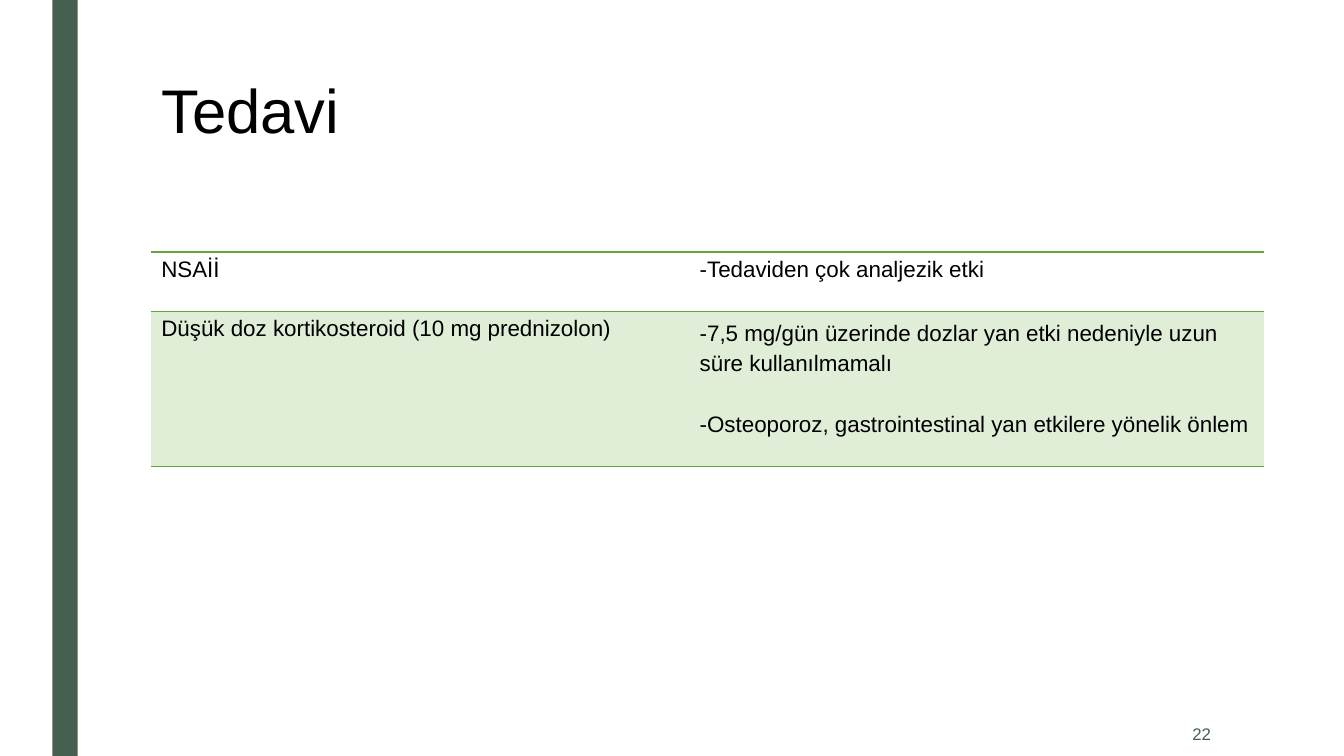
from pptx import Presentation
from pptx.dml.color import RGBColor
from pptx.enum.shapes import MSO_SHAPE
from pptx.enum.text import MSO_ANCHOR, PP_ALIGN
from pptx.oxml import parse_xml
from pptx.oxml.ns import nsdecls
from pptx.util import Inches, Pt

COLORS = {"text": "000000", "bar": "455F51", "rule": "63A537", "band": "E0EDD7"}


def style(para, size, color="text"):
    para.font.name = "Arial"
    para.font.size = Pt(size)
    para.font.color.rgb = RGBColor.from_string(COLORS[color])


def set_borders(cell):
    """Green rules above and below the cell, none at its sides."""
    rule = f'<a:solidFill><a:srgbClr val="{COLORS["rule"]}"/></a:solidFill>'
    sides = {"lnL": "<a:noFill/>", "lnR": "<a:noFill/>", "lnT": rule, "lnB": rule}
    properties = cell._tc.get_or_add_tcPr()
    for position, (side, paint) in enumerate(sides.items()):
        line = f'<a:{side} {nsdecls("a")} w="{Pt(1)}">{paint}</a:{side}>'
        properties.insert(position, parse_xml(line))


deck = Presentation()
deck.slide_width, deck.slide_height = Inches(13.33), Inches(7.5)
page = deck.slides.add_slide(deck.slide_layouts[5])

# Side bar
bar = page.shapes.add_shape(MSO_SHAPE.RECTANGLE, Inches(0.52), 0, Inches(0.25), Inches(7.5))
bar.shadow.inherit = False
bar.fill.solid()
bar.fill.fore_color.rgb = RGBColor.from_string(COLORS["bar"])
bar.line.fill.background()

# Title
title = page.shapes.title
title.left, title.top = Inches(1.5), Inches(0.75)
title.width, title.height = Inches(10.5), Inches(1.62)
title.text_frame.text = "Tedavi"
title.text_frame.vertical_anchor = MSO_ANCHOR.TOP
heading = title.text_frame.paragraphs[0]
heading.alignment = PP_ALIGN.LEFT
heading.line_spacing = 0.89
style(heading, 44)

# Treatment table: drug, notes (one paragraph each), line spacing of the notes
treatments = [
    ("NSAİİ", ["-Tedaviden çok analjezik etki"], 1.0),
    ("Düşük doz kortikosteroid (10 mg prednizolon)",
     ["-7,5 mg/gün üzerinde dozlar yan etki nedeniyle uzun süre kullanılmamalı",
      "-Osteoporoz, gastrointestinal yan etkilere yönelik önlem"], 1.2),
]
table = page.shapes.add_table(2, 2, Inches(1.5), Inches(2.5), Inches(11.04), Inches(2.13)).table
table.first_row = table.horz_banding = False
for column, width in zip(table.columns, (4.84, 6.2)):
    column.width = Inches(width)
for row, height in zip(table.rows, (0.59, 1.54)):
    row.height = Inches(height)

for index, (drug, notes, spacing) in enumerate(treatments):
    drug_cell, notes_cell = table.rows[index].cells
    drug_cell.text = drug
    notes_cell.text = "\n".join(notes)
    for cell in (drug_cell, notes_cell):
        if index == 1:
            cell.fill.solid()
            cell.fill.fore_color.rgb = RGBColor.from_string(COLORS["band"])
        else:
            cell.fill.background()
        set_borders(cell)
        for para in cell.text_frame.paragraphs:
            style(para, 16)
    for number, para in enumerate(notes_cell.text_frame.paragraphs):
        para.line_spacing = spacing
        para.space_before = Pt(22 * number)
        para._p.get_or_add_pPr().set("marL", str(Inches(0.5)))

# Slide number
number_box = page.shapes.add_textbox(Inches(10.36), Inches(7.06), Inches(1.75), Inches(0.44))
number_box.text_frame.word_wrap = True
number_box.text_frame.vertical_anchor = MSO_ANCHOR.MIDDLE
number_box.text_frame.text = "22"
number_para = number_box.text_frame.paragraphs[0]
number_para.alignment = PP_ALIGN.RIGHT
style(number_para, 12, "bar")

deck.save("out.pptx")
